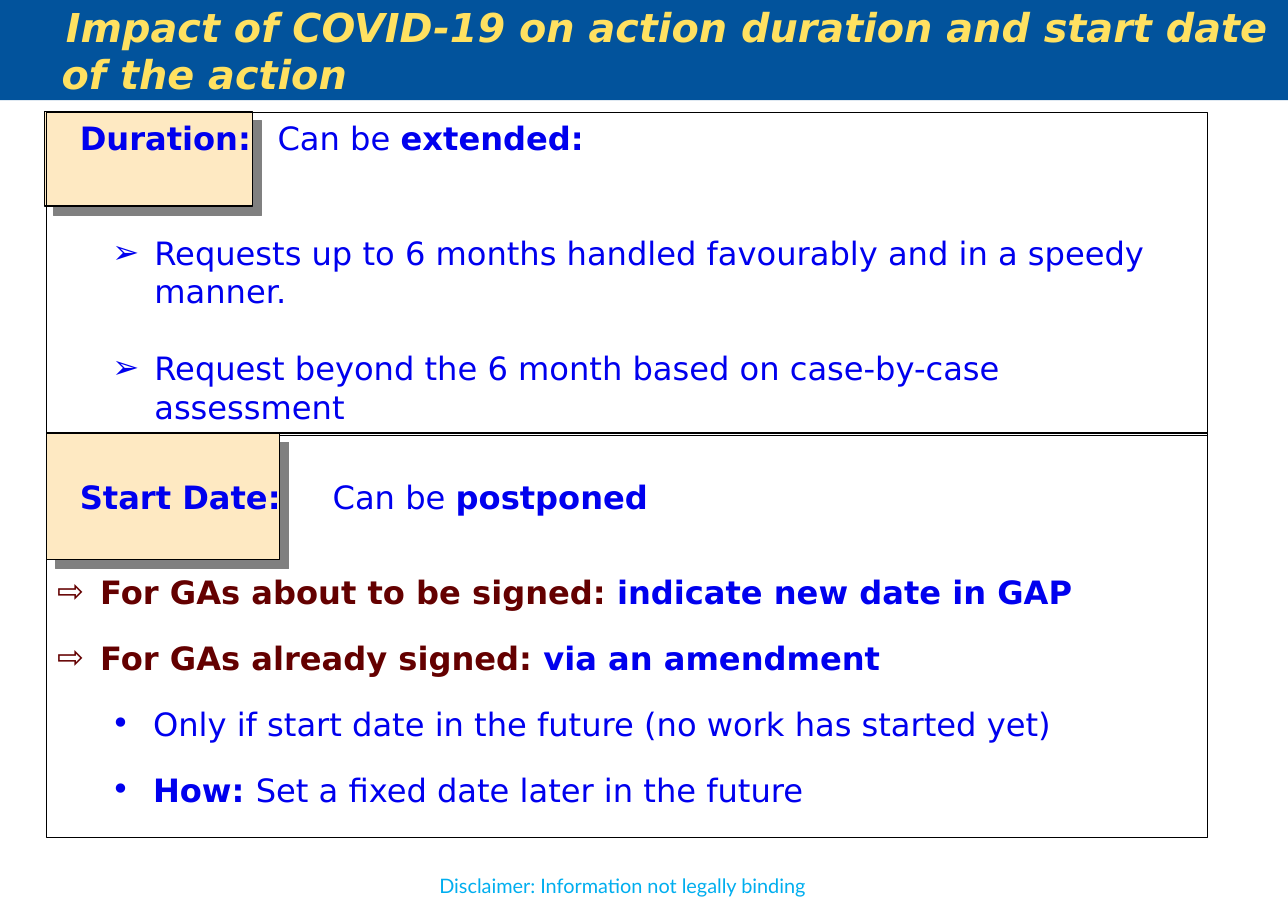
from lxml.etree import SubElement
from pptx import Presentation
from pptx.dml.color import RGBColor
from pptx.enum.shapes import MSO_SHAPE
from pptx.enum.text import MSO_ANCHOR, MSO_AUTO_SIZE, PP_ALIGN
from pptx.oxml.ns import qn
from pptx.util import Cm, Pt

COLOURS = {"band": "02539C", "title": "FFE161", "tab": "FEE9C2", "line": "000000",
           "shadow": "808080", "text": "0000EE", "case": "640000", "note": "00AEEF"}


def colour(name):
    """Return the named colour."""
    return RGBColor.from_string(COLOURS[name])


def write(para, text, size=21, font="DejaVu Sans", ink="text", bold=False, italic=False):
    """Add a formatted span of text to a paragraph."""
    span = para.add_run()
    span.text = text
    span.font.size = Pt(size)
    span.font.name = font
    span.font.bold = bold
    span.font.italic = italic
    span.font.color.rgb = colour(ink)


def format_para(para, margin=0, indent=0, before=0, bullet=None, stop=None):
    """Set the indents, spacing, bullet and tab stop of a paragraph."""
    para.alignment = PP_ALIGN.LEFT
    para.space_before = Pt(before)
    properties = para._p.get_or_add_pPr()
    properties.set("marL", str(Cm(margin)))
    properties.set("indent", str(Cm(indent)))
    if bullet:
        SubElement(properties, qn("a:buFont"), typeface="DejaVu Sans")
        SubElement(properties, qn("a:buChar"), char=bullet)
    else:
        SubElement(properties, qn("a:buNone"))
    if stop:
        stops = SubElement(properties, qn("a:tabLst"))
        SubElement(stops, qn("a:tab"), pos=str(Cm(stop)), algn="l")


def place(shape, left, top, width, height):
    """Move and size a shape, in centimetres."""
    shape.left, shape.top = Cm(left), Cm(top)
    shape.width, shape.height = Cm(width), Cm(height)


def set_frame(frame, side=0.25, top=0.13, anchor=MSO_ANCHOR.TOP):
    """Set the insets, wrapping and anchor of a text frame."""
    frame.margin_left = frame.margin_right = Cm(side)
    frame.margin_top, frame.margin_bottom = Cm(top), Cm(0.13)
    frame.word_wrap = True
    frame.auto_size = MSO_AUTO_SIZE.NONE
    frame.vertical_anchor = anchor


def outline(shape):
    """Give a shape the thin black line."""
    shape.line.color.rgb = colour("line")
    shape.line.width = Pt(0.75)


def add_title(title, box, text):
    """Fill the title band at the top of the page."""
    place(title, *box)
    title.fill.solid()
    title.fill.fore_color.rgb = colour("band")
    set_frame(title.text_frame, side=0.28, anchor=MSO_ANCHOR.MIDDLE)
    para = title.text_frame.paragraphs[0]
    format_para(para, margin=1.14, indent=0.1)
    write(para, text, size=26, ink="title", bold=True, italic=True)


def add_tab(page, body, box):
    """Put a shadowed tab behind the heading of a body."""
    tab = page.shapes.add_shape(MSO_SHAPE.RECTANGLE, *map(Cm, box))
    tab.fill.solid()
    tab.fill.fore_color.rgb = colour("tab")
    outline(tab)
    tab.shadow.inherit = False
    effects = tab.element.spPr.find(qn("a:effectLst"))
    shadow = SubElement(effects, qn("a:outerShdw"), blurRad="0", dist=str(Pt(8.5)),
                        dir="2700000", algn="tl", rotWithShape="0")
    SubElement(shadow, qn("a:srgbClr"), val=COLOURS["shadow"])
    body.element.addprevious(tab.element)


def add_section(page, body, box, tab, inset, stop, heading, items):
    """Fill an outlined body with a tabbed heading and bulleted items."""
    left, top, width, height = box
    shift_x, shift_y, tab_width, tab_height = tab
    add_tab(page, body, (left + shift_x, top + shift_y, tab_width, tab_height))
    place(body, *box)
    outline(body)
    frame = body.text_frame
    set_frame(frame, top=inset)
    para = frame.paragraphs[0]
    format_para(para, indent=0.52, stop=stop)
    label, lead, keyword = heading
    write(para, label + "\t", bold=True)
    write(para, lead)
    write(para, keyword, bold=True)
    for level, layout, spans in items:
        para = frame.add_paragraph()
        para.level = level
        format_para(para, **layout)
        for text, look in spans:
            write(para, text, **look)


def add_note(page, box, text):
    """Add the centred disclaimer."""
    note = page.shapes.add_textbox(*map(Cm, box))
    set_frame(note.text_frame)
    para = note.text_frame.paragraphs[0]
    para.alignment = PP_ALIGN.CENTER
    write(para, text, size=13, font="Lato", ink="note")


def main():
    """Build and save the deck."""
    deck = Presentation()
    deck.slide_width, deck.slide_height = Cm(29.7), Cm(21)
    page = deck.slides.add_slide(deck.slide_layouts[3])
    title, duration, start = page.placeholders

    add_title(title, (0, 0, 29.7, 2.31),
              "Impact of COVID-19 on action duration and start date of the action")

    plain, strong, case = {}, {"bold": True}, {"bold": True, "ink": "case"}
    request = {"margin": 2.24, "indent": -0.97, "bullet": "➢"}
    arrow = {"margin": 0.99, "indent": -0.99, "bullet": "⇨"}
    dot = {"margin": 2.21, "indent": -0.97, "before": 18, "bullet": "•"}

    add_section(
        page, duration, (1.07, 2.59, 26.77, 7.44), (-0.05, -0.02, 4.8, 2.18), 0.13, 5.08,
        ("Duration:", "Can be ", "extended:"),
        [(0, {**request, "before": 50},
          [("Requests up to 6 months handled favourably and in a speedy manner.", plain)]),
         (0, {**request, "before": 25},
          [("Request beyond the 6 month based on case-by-case assessment", plain)])])
    add_section(
        page, start, (1.07, 9.98, 26.77, 9.32), (0, 0, 5.38, 2.92), 1.02, 5.66,
        ("Start Date:", "Can be ", "postponed"),
        [(0, {**arrow, "before": 37},
          [("For GAs about to be signed:", case), (" indicate new date in GAP", strong)]),
         (0, {**arrow, "before": 18},
          [("For GAs already signed: ", case), ("via an amendment", strong)]),
         (1, dot, [("Only if start date in the future (no work has started yet)", plain)]),
         (1, dot, [("How: ", strong), ("Set a fixed date later in the future", plain)])])

    add_note(page, (9.65, 20.02, 9.4, 0.81), "Disclaimer: Information not legally binding")
    deck.save("out.pptx")


if __name__ == "__main__":
    main()
